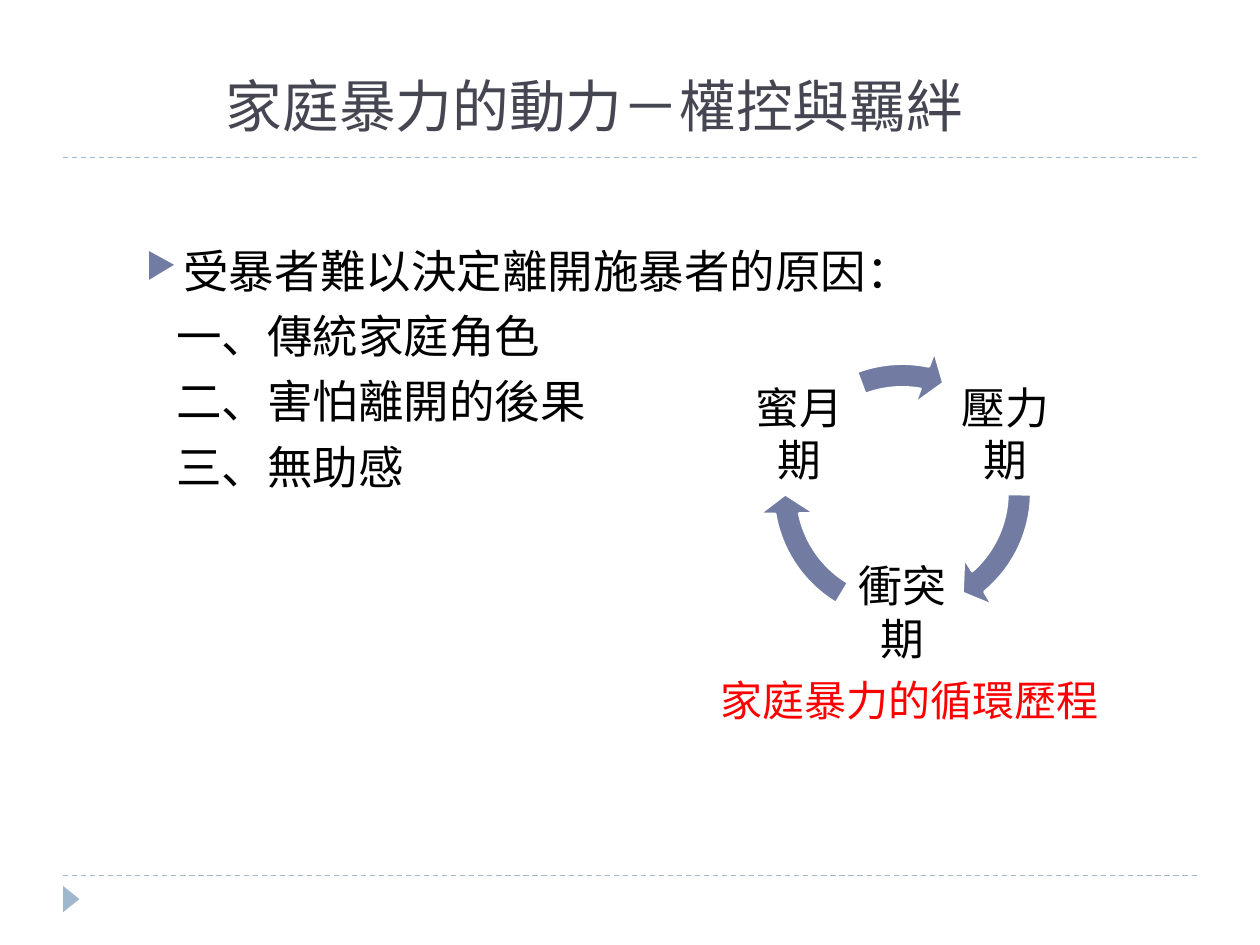
from math import cos, radians, sin

from lxml.etree import SubElement
from pptx import Presentation
from pptx.dml.color import RGBColor
from pptx.enum.dml import MSO_LINE
from pptx.enum.shapes import MSO_CONNECTOR, MSO_SHAPE
from pptx.enum.text import MSO_ANCHOR, PP_ALIGN
from pptx.oxml.ns import qn
from pptx.util import Cm, Pt

BLUE, PALE, WHITE, BLACK = "727CA3", "9FB8CD", "FFFFFF", "000000"


def color(code):
    return RGBColor.from_string(code)


class Deck:
    def __init__(self):
        self.prs = Presentation()
        self.prs.slide_width, self.prs.slide_height = Cm(25.4), Cm(19.05)
        self.slide = self.prs.slides.add_slide(self.prs.slide_layouts[5])
        self.shapes = self.slide.shapes

    def style(self, para, size, font, code, align):
        para.alignment = align
        for run in para.runs:
            run.font.size = Pt(size)
            run.font.name = font
            run.font.color.rgb = color(code)

    def title(self, text, left, top, width, height):
        shape = self.shapes.title
        shape.left, shape.top = Cm(left), Cm(top)
        shape.width, shape.height = Cm(width), Cm(height)
        frame = shape.text_frame
        frame.text = text
        frame.vertical_anchor = MSO_ANCHOR.BOTTOM
        self.style(frame.paragraphs[0], 32.4, "Roboto Slab", "464653", PP_ALIGN.CENTER)

    def text(self, text, left, top, width, height, size, font="Calibri",
             code=BLACK, align=PP_ALIGN.CENTER, anchor=MSO_ANCHOR.MIDDLE, inset=None):
        box = self.shapes.add_textbox(Cm(left), Cm(top), Cm(width), Cm(height))
        frame = box.text_frame
        frame.word_wrap = True
        frame.vertical_anchor = anchor
        if inset is not None:
            frame.margin_left = frame.margin_right = Cm(inset)
            frame.margin_top = frame.margin_bottom = Cm(inset)
        frame.text = text
        for para in frame.paragraphs:
            self.style(para, size, font, code, align)
        return frame

    def indent(self, para, left, first=0):
        props = para._p.get_or_add_pPr()
        props.set("marL", str(Cm(left)))
        props.set("indent", str(Cm(first)))
        return props

    def bullet(self, para):
        props = self.indent(para, 0.76, -0.76)
        tint = SubElement(props, qn("a:buClr"))
        SubElement(tint, qn("a:srgbClr"), val=BLUE)
        SubElement(props, qn("a:buSzPct"), val="76000")
        SubElement(props, qn("a:buChar"), char="▶")

    def rule(self, top):
        """Draw a dashed line across the slide."""
        line = self.shapes.add_connector(
            MSO_CONNECTOR.STRAIGHT, Cm(1.27), Cm(top), Cm(24.13), Cm(top))
        line.line.color.rgb = color(PALE)
        line.line.width = Pt(0.75)
        line.line.dash_style = MSO_LINE.DASH
        SubElement(line._element.spPr, qn("a:effectLst"))

    def shape(self, kind, left, top, width, height, fill, edge=None):
        shape = self.shapes.add_shape(kind, Cm(left), Cm(top), Cm(width), Cm(height))
        shape.shadow.inherit = False
        shape.fill.solid()
        shape.fill.fore_color.rgb = color(fill)
        if edge:
            shape.line.color.rgb = color(edge)
            shape.line.width = Pt(1.5)
        else:
            shape.line.fill.background()
        return shape

    def cycle(self, steps, x, y, ring, radius, side):
        """Set labels around a centre, each followed by its arrow."""
        for step, (name, end, start) in enumerate(steps):
            angle = radians(120 * step - 30)
            self.text(name, x + radius * cos(angle) - side / 2,
                      y + radius * sin(angle) - side / 2,
                      side, side, 25, "Arial", inset=0.08)
            arrow = self.shape(MSO_SHAPE.CIRCULAR_ARROW, x - ring / 2, y - ring / 2,
                               ring, ring, BLUE, WHITE)
            for spot, value in enumerate((0.082, 5.751, end, start, 0.096)):
                arrow.adjustments[spot] = value


def main():
    deck = Deck()
    for top in (17.65, 3.18):
        deck.rule(top)
    mark = deck.shape(MSO_SHAPE.ISOSCELES_TRIANGLE, 1.17, 17.96, 0.53, 0.33, PALE)
    mark.rotation = 90
    deck.title("家庭暴力的動力－權控與羈絆", 1.5, 1.32, 20.96, 1.6)

    lines = ["受暴者難以決定離開施暴者的原因：", "一、傳統家庭角色",
             "二、害怕離開的後果", "三、無助感"]
    body = deck.text("\n".join(lines), 2.69, 4.78, 18.8, 12.24, 26,
                     align=PP_ALIGN.LEFT, anchor=MSO_ANCHOR.TOP)
    head, *rest = body.paragraphs
    for para in body.paragraphs:
        para.space_before = Pt(6)
    deck.bullet(head)
    for para in rest:
        deck.indent(para, 0.61)

    steps = [("壓力期", 29.685, 0.486), ("衝突期", 101.763, 72.564),
             ("蜜月期", 168.611, 149.638)]
    deck.cycle(steps, x=18.19, y=9.93, ring=5.84, radius=2.4, side=2.46)
    deck.text("家庭暴力的循環歷程", 11.91, 13.51, 12.85, 1.19, 24, code="FF0000")
    deck.prs.save("out.pptx")


if __name__ == "__main__":
    main()
